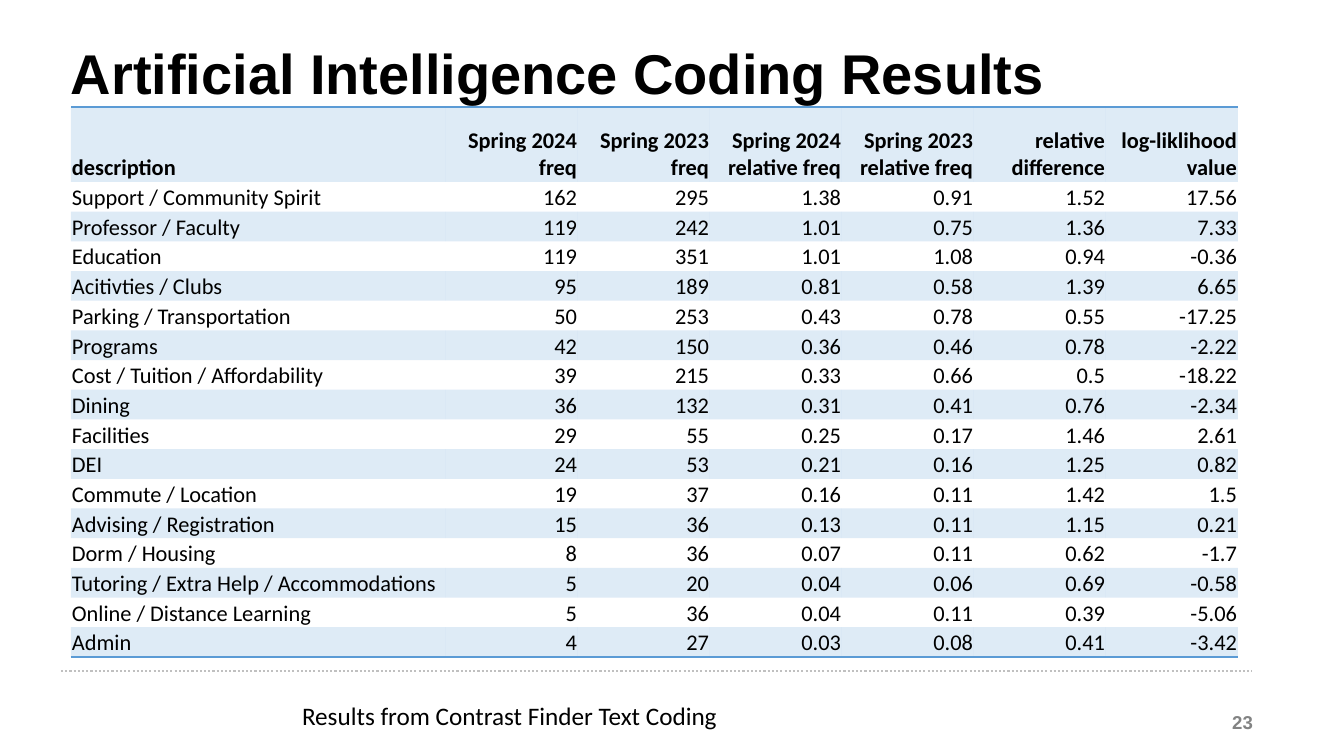
import dataclasses

import lxml.etree
import pptx
import pptx.dml.color
import pptx.enum.dml
import pptx.enum.shapes
import pptx.enum.text
import pptx.oxml.ns
import pptx.util

EMU_PER_PX = 914400 / 100.8
NO_STYLE = "{2D5ABB26-0587-4C30-8999-92F81FD0307C}"
ALIGN = pptx.enum.text.PP_ALIGN
ANCHOR = pptx.enum.text.MSO_ANCHOR
qn = pptx.oxml.ns.qn


@dataclasses.dataclass(frozen=True)
class Theme:
    ink: str = "000000"
    accent: str = "5B9BD5"
    rule: str = "C0C0C0"
    number: str = "828383"
    band_alpha: int = 20
    heading_font: str = "Arial"
    body_font: str = "Calibri"
    title_size: float = 40
    caption_size: float = 18
    cell_size: float = 16
    number_size: float = 13.3


THEME = Theme()

HEADER = ("description", "Spring 2024 freq", "Spring 2023 freq",
          "Spring 2024 relative freq", "Spring 2023 relative freq",
          "relative difference", "log-liklihood value")
CODES = (
    ("Support / Community Spirit", "162", "295", "1.38", "0.91", "1.52", "17.56"),
    ("Professor / Faculty", "119", "242", "1.01", "0.75", "1.36", "7.33"),
    ("Education", "119", "351", "1.01", "1.08", "0.94", "-0.36"),
    ("Acitivties / Clubs", "95", "189", "0.81", "0.58", "1.39", "6.65"),
    ("Parking / Transportation", "50", "253", "0.43", "0.78", "0.55", "-17.25"),
    ("Programs", "42", "150", "0.36", "0.46", "0.78", "-2.22"),
    ("Cost / Tuition / Affordability", "39", "215", "0.33", "0.66", "0.5", "-18.22"),
    ("Dining", "36", "132", "0.31", "0.41", "0.76", "-2.34"),
    ("Facilities", "29", "55", "0.25", "0.17", "1.46", "2.61"),
    ("DEI", "24", "53", "0.21", "0.16", "1.25", "0.82"),
    ("Commute / Location", "19", "37", "0.16", "0.11", "1.42", "1.5"),
    ("Advising / Registration", "15", "36", "0.13", "0.11", "1.15", "0.21"),
    ("Dorm / Housing", "8", "36", "0.07", "0.11", "0.62", "-1.7"),
    ("Tutoring / Extra Help / Accommodations", "5", "20", "0.04", "0.06", "0.69", "-0.58"),
    ("Online / Distance Learning", "5", "36", "0.04", "0.11", "0.39", "-5.06"),
    ("Admin", "4", "27", "0.03", "0.08", "0.41", "-3.42"),
)


def px(n):
    return pptx.util.Emu(round(n * EMU_PER_PX))


def rgb(color):
    return pptx.dml.color.RGBColor.from_string(color)


def add_run(p, text, font, size, color, bold=False):
    r = p.add_run()
    r.text = text
    r.font.name = font
    r.font.size = pptx.util.Pt(size)
    r.font.bold = bold
    r.font.color.rgb = rgb(color)


def add_text(s, box, text, font, size, color, bold=False,
             align=ALIGN.LEFT, anchor=ANCHOR.TOP, spacing=None, inset=(10, 5)):
    tf = s.shapes.add_textbox(*map(px, box)).text_frame
    tf.word_wrap = True
    tf.vertical_anchor = anchor
    tf.margin_left = tf.margin_right = px(inset[0])
    tf.margin_top = tf.margin_bottom = px(inset[1])
    p = tf.paragraphs[0]
    p.alignment = align
    p.line_spacing = spacing
    add_run(p, text, font, size, color, bold)


def add_rule(s, x1, x2, y):
    line = s.shapes.add_connector(
        pptx.enum.shapes.MSO_CONNECTOR.STRAIGHT, px(x1), px(y), px(x2), px(y))
    line.line.color.rgb = rgb(THEME.rule)
    line.line.width = pptx.util.Pt(1.5)
    line.line.dash_style = pptx.enum.dml.MSO_LINE.ROUND_DOT
    lxml.etree.SubElement(line._element.spPr, qn("a:effectLst"))


def fill_band(cell):
    """Tint the cell with the translucent accent colour."""
    cell.fill.solid()
    cell.fill.fore_color.rgb = rgb(THEME.accent)
    color = cell._tc.tcPr.find(qn("a:solidFill"))[0]
    lxml.etree.SubElement(color, qn("a:alpha"), val=str(THEME.band_alpha * 1000))


def add_border(cell, tag):
    """Draw one cell edge; tag is a:lnT for the top or a:lnB for the bottom."""
    ln = lxml.etree.Element(qn(tag), w=str(pptx.util.Pt(1)))
    fill = lxml.etree.SubElement(ln, qn("a:solidFill"))
    lxml.etree.SubElement(fill, qn("a:srgbClr"), val=THEME.accent)
    cell._tc.get_or_add_tcPr().insert(0, ln)


def fill_cell(cell, text, bold, align, banded):
    cell.margin_left = cell.margin_right = cell.margin_top = px(1)
    cell.margin_bottom = 0
    cell.vertical_anchor = ANCHOR.BOTTOM
    p = cell.text_frame.paragraphs[0]
    p.alignment = align
    add_run(p, text, THEME.body_font, THEME.cell_size, THEME.ink, bold)
    if banded:
        fill_band(cell)
    else:
        cell.fill.background()


def add_results_table(s, left, top, height, header_height, label_width, value_width):
    rows = (HEADER,) + CODES
    width = label_width + value_width * (len(HEADER) - 1)
    table = s.shapes.add_table(len(rows), len(HEADER), px(left), px(top),
                               px(width), px(height)).table
    table._tbl.tblPr.find(qn("a:tableStyleId")).text = NO_STYLE
    for i, column in enumerate(table.columns):
        column.width = px(value_width if i else label_width)
    for i, row in enumerate(table.rows):
        row.height = px((height - header_height) / len(CODES) if i else header_height)
        for j, text in enumerate(rows[i]):
            fill_cell(row.cells[j], text, bold=i == 0,
                      align=ALIGN.RIGHT if j else ALIGN.LEFT, banded=i % 2 == 0)
    for j in range(len(HEADER)):
        add_border(table.cell(0, j), "a:lnT")
        add_border(table.cell(len(CODES), j), "a:lnB")


def main():
    prs = pptx.Presentation()
    prs.slide_width, prs.slide_height = px(1344), px(756)
    s = prs.slides.add_slide(prs.slide_layouts[6])
    add_rule(s, 61, 1252, 671)
    add_text(s, (964, 702, 302, 40), "23", THEME.heading_font, THEME.number_size,
             THEME.number, bold=True, align=ALIGN.RIGHT, anchor=ANCHOR.MIDDLE,
             inset=(13, 7))
    add_text(s, (61, 41, 1188, 94), "Artificial Intelligence Coding Results",
             THEME.heading_font, THEME.title_size, THEME.ink, bold=True, spacing=0.9)
    add_results_table(s, left=71, top=107, height=550, header_height=75,
                      label_width=375, value_width=132)
    add_text(s, (292, 695, 438, 40), "Results from Contrast Finder Text Coding",
             THEME.body_font, THEME.caption_size, THEME.ink)
    prs.save("out.pptx")


if __name__ == "__main__":
    main()
